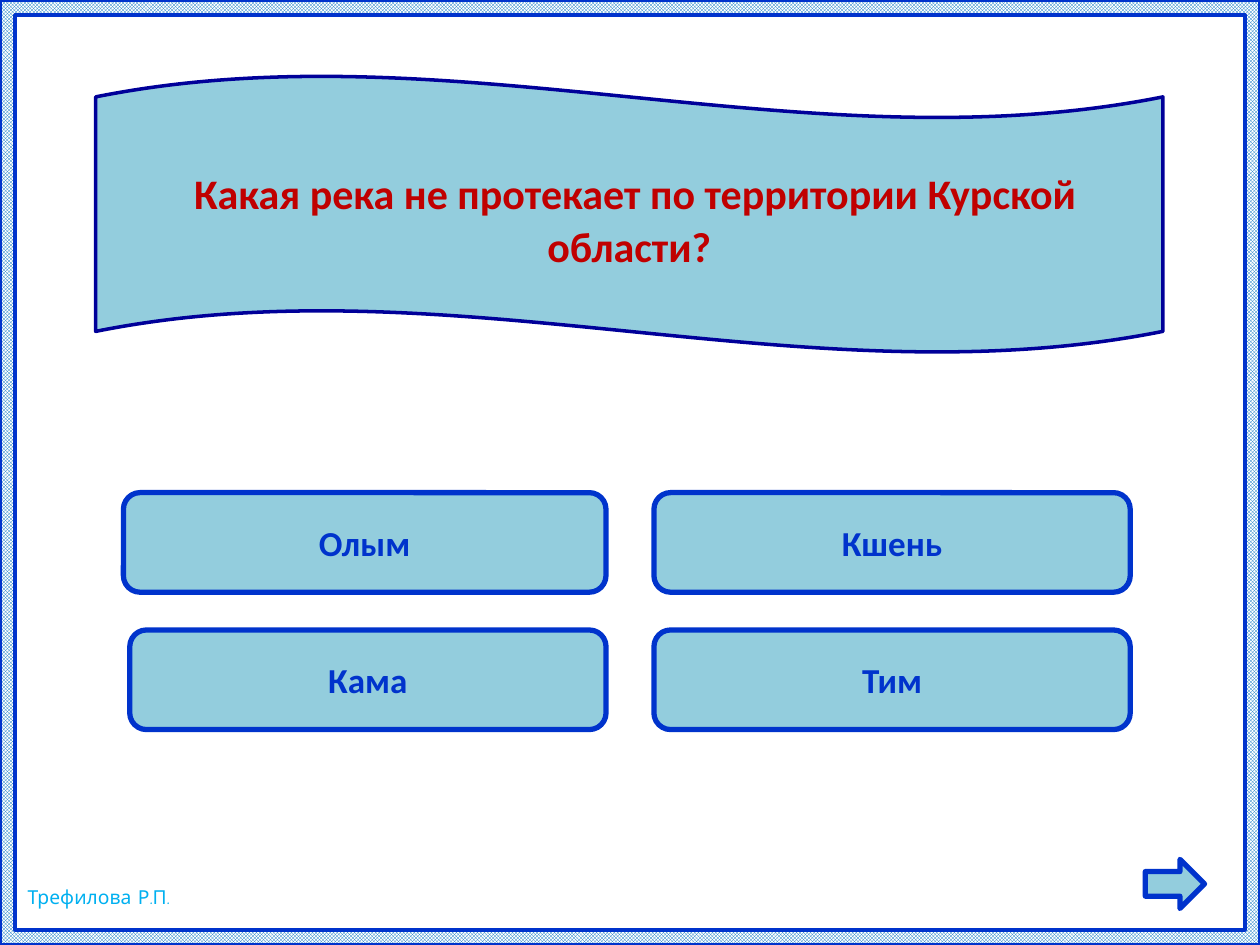
from pptx import Presentation
from pptx.dml.color import RGBColor
from pptx.enum.dml import MSO_PATTERN
from pptx.enum.shapes import MSO_SHAPE
from pptx.enum.text import MSO_ANCHOR, MSO_AUTO_SIZE, PP_ALIGN
from pptx.util import Inches, Pt

WHITE = RGBColor(0xFF, 0xFF, 0xFF)
CHECK_BLUE = RGBColor(0x00, 0x70, 0xC0)
BLUE = RGBColor(0x00, 0x33, 0xCC)
NAVY = RGBColor(0x00, 0x00, 0x99)
LIGHT_BLUE = RGBColor(0x93, 0xCD, 0xDD)
RED = RGBColor(0xC0, 0x00, 0x00)
SKY = RGBColor(0x00, 0xB0, 0xF0)


def add_outlined_shape(slide, kind, box, line_color, line_width):
    """Add a light blue shape; box is left, top, width, height in inches."""
    shape = slide.shapes.add_shape(kind, *map(Inches, box))
    shape.shadow.inherit = False
    shape.fill.solid()
    shape.fill.fore_color.rgb = LIGHT_BLUE
    shape.line.color.rgb = line_color
    shape.line.width = Pt(line_width)
    return shape


def format_run(run, size, color, name="Calibri", bold=True):
    run.font.name = name
    run.font.size = Pt(size)
    run.font.bold = bold
    run.font.color.rgb = color


def write_centred(shape, text, size, color):
    text_frame = shape.text_frame
    text_frame.word_wrap = True
    text_frame.vertical_anchor = MSO_ANCHOR.MIDDLE
    text_frame.text = text
    paragraph = text_frame.paragraphs[0]
    paragraph.alignment = PP_ALIGN.CENTER
    format_run(paragraph.runs[0], size, color)
    return paragraph


def add_border(slide, box):
    frame = add_outlined_shape(slide, MSO_SHAPE.FRAME, box, BLUE, 2)
    frame.adjustments[0] = 0.016
    frame.fill.patterned()
    frame.fill.pattern = MSO_PATTERN.SMALL_CHECKER_BOARD
    frame.fill.fore_color.rgb = CHECK_BLUE
    frame.fill.back_color.rgb = WHITE


def add_author(slide, box, name):
    text_frame = slide.shapes.add_textbox(*map(Inches, box)).text_frame
    text_frame.word_wrap = False
    text_frame.auto_size = MSO_AUTO_SIZE.SHAPE_TO_FIT_TEXT
    text_frame.text = name
    format_run(text_frame.paragraphs[0].runs[0], 11, SKY, "Comic Neue", False)


def add_question(slide, box, question):
    wave = add_outlined_shape(slide, MSO_SHAPE.WAVE, box, NAVY, 2)
    wave.adjustments[0] = 0.077
    wave.adjustments[1] = 0
    # The larger opening space sets the height of the first line
    paragraph = write_centred(wave, " ", 30, RED)
    run = paragraph.add_run()
    run.text = question
    format_run(run, 24, RED)


def add_answers(slide, box, rows):
    """Place the answers in a two-column grid inside the box."""
    left, top, width, height = box
    button_width, button_height = 3.78, 0.79
    column_step = width - button_width
    row_step = height - button_height
    for row, answers in enumerate(rows):
        for column, answer in enumerate(answers):
            # The first button reaches slightly further left than the grid
            extra = 0.05 if row == column == 0 else 0
            button_box = (left + column * column_step - extra,
                          top + row * row_step,
                          button_width + extra, button_height)
            button = add_outlined_shape(
                slide, MSO_SHAPE.ROUNDED_RECTANGLE, button_box, BLUE, 3)
            write_centred(button, answer, 20, BLUE)


def add_next_arrow(slide, box):
    add_outlined_shape(slide, MSO_SHAPE.RIGHT_ARROW, box, BLUE, 3)


def main():
    presentation = Presentation()
    presentation.slide_width = Inches(10)
    presentation.slide_height = Inches(7.5)
    slide = presentation.slides.add_slide(presentation.slide_layouts[6])
    slide.background.fill.solid()
    slide.background.fill.fore_color.rgb = WHITE

    # Border and author
    add_border(slide, (0, 0, 10, 7.5))
    add_author(slide, (0.12, 6.98, 1.42, 0.29), "Трефилова Р.П.")

    # Quiz question with its answers
    add_question(slide, (0.76, 0.6, 8.47, 2.2),
                 "Какая река не протекает по территории Курской области?")
    add_answers(slide, (1.03, 3.91, 7.94, 1.88),
                [("Олым", "Кшень"), ("Кама", "Тим")])

    # Arrow to the next slide
    add_next_arrow(slide, (9.09, 6.82, 0.47, 0.39))
    presentation.save("out.pptx")


if __name__ == "__main__":
    main()
